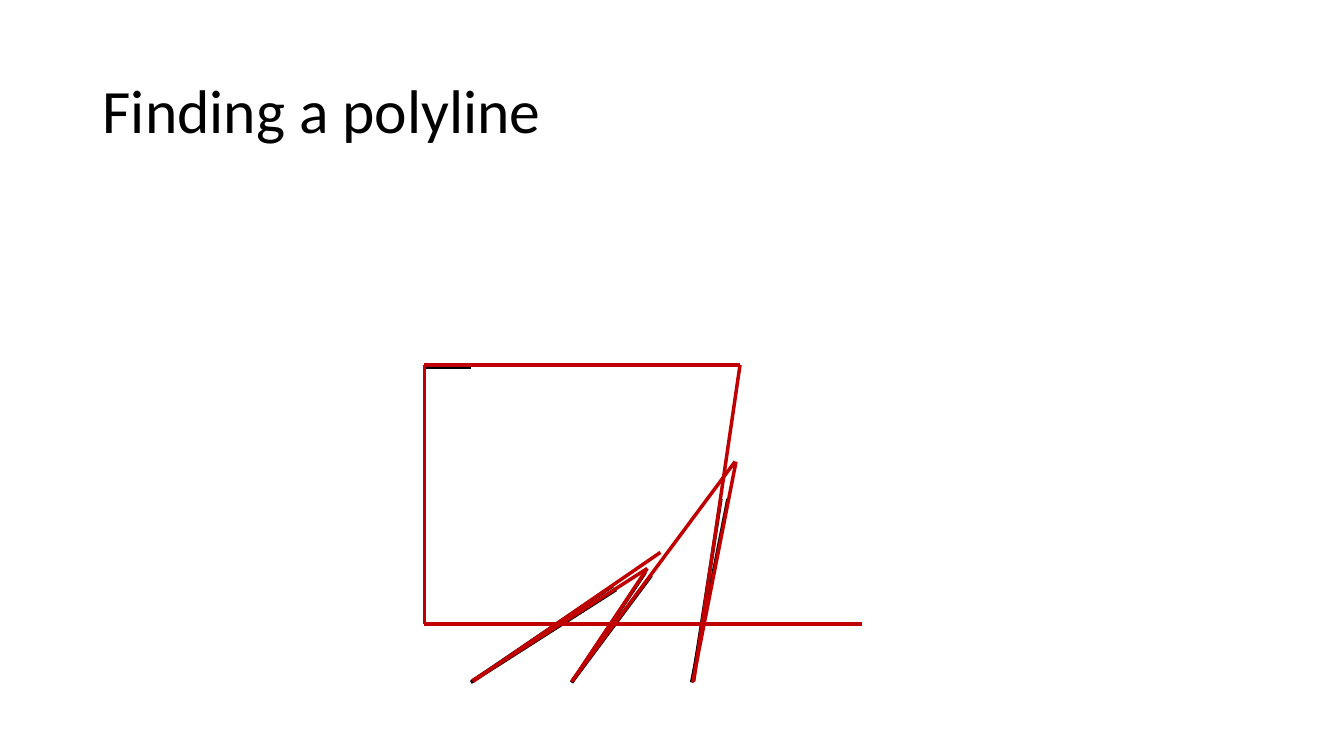
"""Build the slide that shows a red polyline fitted to black segments."""
from dataclasses import dataclass
from typing import NamedTuple

from lxml.etree import SubElement
from pptx import Presentation
from pptx.dml.color import RGBColor
from pptx.enum.shapes import MSO_CONNECTOR as Connector
from pptx.enum.text import MSO_ANCHOR as Anchor
from pptx.oxml.ns import qn
from pptx.util import Emu, Pt

EMU_PER_PX = 9144


@dataclass(frozen=True)
class Theme:
    ink: RGBColor = RGBColor(0x00, 0x00, 0x00)
    polyline: RGBColor = RGBColor(0xC0, 0x00, 0x00)
    font: str = "Calibri"
    title_size: Pt = Pt(44)
    stroke: Pt = Pt(2.5)


class Segment(NamedTuple):
    x1: int
    y1: int
    x2: int
    y2: int


THEME = Theme()

DETECTED = [
    Segment(640, 568, 567, 677),
    Segment(646, 571, 567, 677),
    Segment(722, 495, 686, 677),
    Segment(715, 495, 687, 676),
    Segment(421, 619, 839, 619),
    Segment(421, 364, 421, 619),
    Segment(421, 364, 467, 364),
    Segment(468, 676, 608, 581),
    Segment(467, 677, 611, 585),
]

POLYLINE = [
    Segment(730, 458, 687, 677),
    Segment(729, 458, 567, 676),
    Segment(642, 564, 568, 675),
    Segment(642, 564, 469, 675),
    Segment(469, 676, 655, 548),
    Segment(421, 362, 734, 362),
    Segment(734, 362, 688, 676),
    Segment(421, 362, 421, 619),
    Segment(421, 619, 855, 619),
]


def px(length: int) -> Emu:
    return Emu(length * EMU_PER_PX)


def draw_title(shapes, wording: str) -> None:
    title = shapes.add_textbox(px(92), px(40), px(1150), px(145))
    frame = title.text_frame
    frame.word_wrap = True
    frame.vertical_anchor = Anchor.MIDDLE
    heading = frame.paragraphs[0]
    heading.text = wording
    heading.line_spacing = 0.9
    heading.font.name = THEME.font
    heading.font.size = THEME.title_size
    heading.font.color.rgb = THEME.ink


def draw_segments(shapes, segments: list[Segment], color: RGBColor) -> None:
    for segment in segments:
        edge = shapes.add_connector(Connector.STRAIGHT, *map(px, segment))
        edge.line.color.rgb = color
        edge.line.width = THEME.stroke
        SubElement(edge._element.spPr, qn("a:effectLst"))


def main() -> None:
    deck = Presentation()
    deck.slide_width, deck.slide_height = px(1333), px(750)
    slide = deck.slides.add_slide(deck.slide_layouts[6])
    draw_title(slide.shapes, "Finding a polyline")
    draw_segments(slide.shapes, DETECTED, THEME.ink)
    draw_segments(slide.shapes.add_group_shape().shapes, POLYLINE, THEME.polyline)
    deck.save("out.pptx")


if __name__ == "__main__":
    main()
